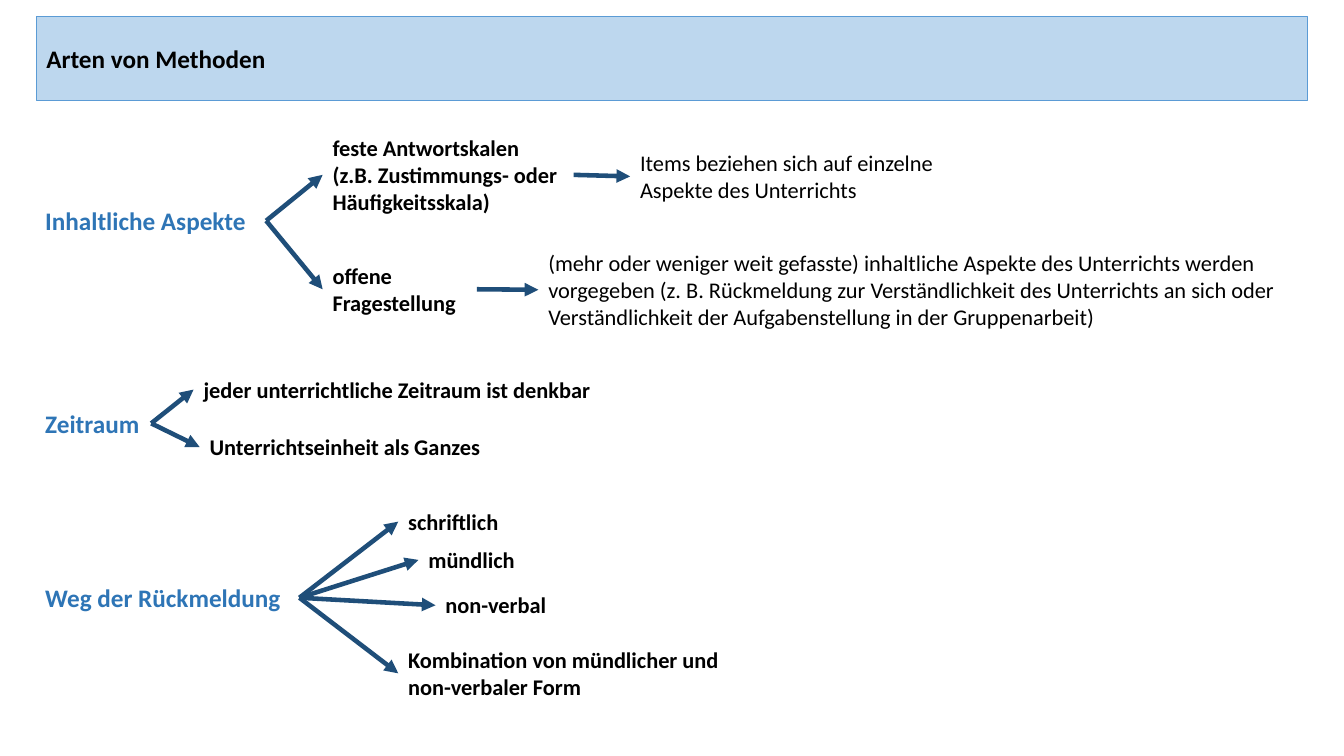
from lxml.etree import SubElement
from pptx import Presentation
from pptx.dml.color import RGBColor
from pptx.enum.shapes import MSO_CONNECTOR as Connector
from pptx.enum.text import MSO_ANCHOR as Anchor, MSO_AUTO_SIZE as AutoSize, PP_ALIGN as Align
from pptx.oxml.ns import qn
from pptx.util import Inches, Pt

RIGHT, LEFT = 3, 1
TITLE_ONLY = 5


def colour(value):
    return RGBColor.from_string(value)


class MethodPage:
    font_name = "Calibri"
    black, blue, navy = "000000", "2E75B6", "1F4E79"
    bar_fill, bar_line = "BDD7EE", "5B9BD5"

    def __init__(self, deck):
        self.page = deck.slides.add_slide(deck.slide_layouts[TITLE_ONLY])

    def set_text(self, box, text, size, text_colour, bold, anchor=Anchor.TOP):
        frame = box.text_frame
        frame.text = text
        frame_format = {"word_wrap": True, "auto_size": AutoSize.SHAPE_TO_FIT_TEXT,
                        "vertical_anchor": anchor}
        for name, value in frame_format.items():
            setattr(frame, name, value)
        span_format = {"name": self.font_name, "size": Pt(size), "bold": bold}
        for para in frame.paragraphs:
            para.alignment = Align.LEFT
            for span in para.runs:
                for name, value in span_format.items():
                    setattr(span.font, name, value)
                span.font.color.rgb = colour(text_colour)

    def title(self, text, left, top, width, height):
        bar = self.page.shapes.title
        place = {"left": left, "top": top, "width": width, "height": height}
        for name, value in place.items():
            setattr(bar, name, Inches(value))
        bar.fill.solid()
        bar.fill.fore_color.rgb = colour(self.bar_fill)
        bar.line.color.rgb = colour(self.bar_line)
        bar.line.width = Pt(0.75)
        self.set_text(bar, text, 18, self.black, True, Anchor.MIDDLE)

    def label(self, text, place, size=16, text_colour=black, bold=True):
        box = self.page.shapes.add_textbox(*map(Inches, place))
        self.set_text(box, text, size, text_colour, bold)
        return box

    def topic(self, text, place):
        return self.label(text, place, 18, self.blue)

    def detail(self, text, place):
        return self.label(text, place, bold=False)

    def arrow(self, source, target):
        arrow = self.page.shapes.add_connector(Connector.STRAIGHT, 0, 0, 0, 0)
        arrow.begin_connect(source, RIGHT)
        arrow.end_connect(target, LEFT)
        arrow.line.color.rgb = colour(self.navy)
        arrow.line.width = Pt(3.25)
        properties = arrow._element.spPr
        SubElement(properties.find(qn("a:ln")), qn("a:tailEnd"), type="triangle")
        SubElement(properties, qn("a:effectLst"))


TOPICS = [
    ("Inhaltliche Aspekte", (0.35, 1.99, 2.29, 0.4), [
        ("feste Antwortskalen\n(z.B. Zustimmungs- oder Häufigkeitsskala)",
         (3.2, 1.28, 2.49, 0.91),
         [("Items beziehen sich auf einzelne Aspekte des Unterrichts",
           (6.25, 1.43, 3.51, 0.64))]),
        ("offene Fragestellung", (3.2, 2.55, 1.53, 0.64),
         [("(mehr oder weniger weit gefasste) inhaltliche Aspekte des Unterrichts "
           "werden vorgegeben (z. B. Rückmeldung zur Verständlichkeit des Unterrichts "
           "an sich oder Verständlichkeit der Aufgabenstellung in der Gruppenarbeit)",
           (5.34, 2.42, 7.57, 0.91))]),
    ]),
    ("Zeitraum", (0.35, 4, 1.15, 0.4), [
        ("jeder unterrichtliche Zeitraum ist denkbar", (1.92, 3.68, 4.12, 0.37), []),
        ("Unterrichtseinheit als Ganzes", (1.98, 4.25, 2.99, 0.37), []),
    ]),
    ("Weg der Rückmeldung", (0.35, 5.73, 2.62, 0.4), [
        ("schriftlich", (3.95, 4.99, 1.21, 0.37), []),
        ("mündlich", (4.15, 5.37, 1.21, 0.37), []),
        ("non-verbal", (4.32, 5.82, 1.41, 0.37), []),
        ("Kombination von mündlicher und non-verbaler Form", (3.95, 6.36, 3.6, 0.64), []),
    ]),
]


def main():
    deck = Presentation()
    deck.slide_width, deck.slide_height = Inches(13.33), Inches(7.5)
    methods = MethodPage(deck)
    methods.title("Arten von Methoden", 0.36, 0.38, 12.61, 0.4)
    for topic_text, topic_place, branches in TOPICS:
        topic = methods.topic(topic_text, topic_place)
        for branch_text, branch_place, details in branches:
            branch = methods.label(branch_text, branch_place)
            methods.arrow(topic, branch)
            for detail_text, detail_place in details:
                methods.arrow(branch, methods.detail(detail_text, detail_place))
    deck.save("out.pptx")


if __name__ == "__main__":
    main()
